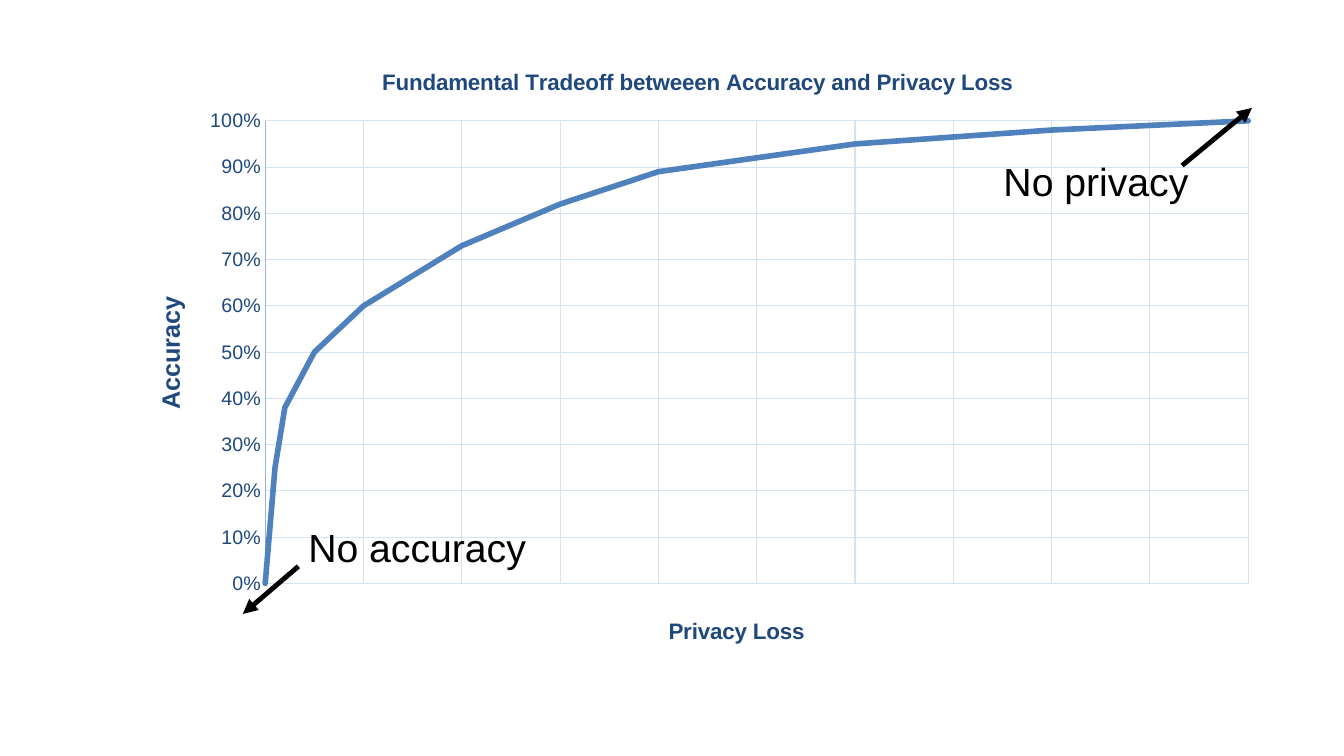
from lxml import etree
from pptx import Presentation
from pptx.chart.data import XyChartData
from pptx.dml.color import RGBColor
from pptx.enum.chart import XL_CHART_TYPE, XL_TICK_MARK
from pptx.enum.shapes import MSO_CONNECTOR
from pptx.enum.text import MSO_AUTO_SIZE
from pptx.oxml.ns import qn
from pptx.util import Cm, Pt

SMOOTH = XL_CHART_TYPE.XY_SCATTER_SMOOTH_NO_MARKERS
NO_TICK = XL_TICK_MARK.NONE
STRAIGHT = MSO_CONNECTOR.STRAIGHT
GROW = MSO_AUTO_SIZE.SHAPE_TO_FIT_TEXT

COLORS = {"ink": "000000", "navy": "1F497D", "curve": "4F81BD",
          "axis": "8EB4E3", "grid": "D4E3F4"}
FONT = "Arial"
LOSS = [0, 0.1, 0.2, 0.5, 1, 2, 3, 4, 6, 8, 10]
ACCURACY = [0, 0.25, 0.38, 0.5, 0.6, 0.73, 0.82, 0.89, 0.95, 0.98, 1]


def style(font, size, color, bold=False):
    font.name, font.size, font.bold = FONT, Pt(size), bold
    font.color.rgb = RGBColor.from_string(COLORS[color])


def write(frame, text, size=28, color="ink", bold=False):
    para = frame.paragraphs[0]
    run = para.add_run()
    run.text = text
    style(run.font, size, color, bold)


def stroke(line, color, width):
    line.color.rgb = RGBColor.from_string(COLORS[color])
    line.width = Pt(width)


def place(node, index, **spots):
    """Give a chart part a manual layout, in shares of the chart."""
    for old in node.findall(qn("c:layout")):
        node.remove(old)
    layout = etree.Element(qn("c:layout"))
    manual = etree.SubElement(layout, qn("c:manualLayout"))
    if "w" in spots:
        etree.SubElement(manual, qn("c:layoutTarget"), val="inner")
    for mode in ("xMode", "yMode"):
        etree.SubElement(manual, qn("c:" + mode), val="edge")
    for key, share in spots.items():
        etree.SubElement(manual, qn("c:" + key), val=str(share))
    node.insert(index, layout)


class Board:
    def __init__(self, deck):
        self.slide = deck.slides.add_slide(deck.slide_layouts[6])
        self.shapes = self.slide.shapes

    def label(self, text, left, top):
        box = self.shapes.add_textbox(Cm(left), Cm(top), Cm(6.05), Cm(1.45))
        box.text_frame.word_wrap = True
        box.text_frame.auto_size = GROW
        write(box.text_frame, text)

    def arrow(self, *ends):
        line = self.shapes.add_connector(STRAIGHT, *map(Cm, ends))
        stroke(line.line, "ink", 3.5)
        etree.SubElement(line.line._get_or_add_ln(), qn("a:tailEnd"),
                         type="triangle")
        etree.SubElement(line._element.spPr, qn("a:effectLst"))

    def title(self, owner, text, x, y, size=16):
        owner.has_title = True
        title = owner.chart_title if hasattr(owner, "chart_title") \
            else owner.axis_title
        write(title.text_frame, text, size, "navy", True)
        place(title._element, 1, x=x, y=y)
        return title

    def axis(self, axis, top, step):
        axis.minimum_scale, axis.maximum_scale = 0, top
        axis.major_unit = step
        axis.major_tick_mark = axis.minor_tick_mark = NO_TICK
        axis.has_major_gridlines = True
        stroke(axis.major_gridlines.format.line, "grid", 0.75)
        stroke(axis.format.line, "axis", 0.75)
        style(axis.tick_labels.font, 14, "navy")

    def chart(self, left, top, width, height):
        data = XyChartData()
        points = data.add_series("Series 1")
        for loss, share in zip(LOSS, ACCURACY):
            points.add_data_point(loss, share)
        chart = self.shapes.add_chart(
            SMOOTH, Cm(left), Cm(top), Cm(width), Cm(height), data).chart
        style(chart.font, 10, "ink")
        chart.has_legend = False

        # Curve
        plot = chart.plots[0]
        plot.vary_by_categories = False
        curve = plot.series[0]
        curve.smooth = True
        stroke(curve.format.line, "curve", 4)
        curve.format.line._get_or_add_ln().set("cap", "rnd")

        # Axes
        across, up = chart.category_axis, chart.value_axis
        self.axis(across, 10, 1)
        self.axis(up, 1, 0.1)
        across.visible = False
        up.tick_labels.number_format = "0%"
        up.tick_labels.number_format_is_linked = False

        # Titles and plot area
        self.title(chart, "Fundamental Tradeoff betweeen Accuracy and "
                   "Privacy Loss", 0.22, 0.03)
        self.title(across, "Privacy Loss", 0.47, 0.92)
        side = self.title(up, "Accuracy", 0.02, 0.4, 18)
        side.text_frame._txBody.bodyPr.set("rot", "-5400000")
        area = chart._chartSpace.chart.plotArea
        place(area, 0, x=0.1214, y=0.1226, w=0.8585, h=0.7505)


def main():
    deck = Presentation()
    deck.slide_width, deck.slide_height = Cm(33.87), Cm(19.05)
    board = Board(deck)
    board.chart(3.18, 1.14, 28.86, 15.54)

    # Both ends of the curve
    board.label("No privacy", 25.04, 3.84)
    board.arrow(7.52, 14.27, 6.12, 15.47)
    board.label("No accuracy", 7.52, 13.06)
    board.arrow(29.79, 4.17, 31.55, 2.72)
    deck.save("out.pptx")


if __name__ == "__main__":
    main()
